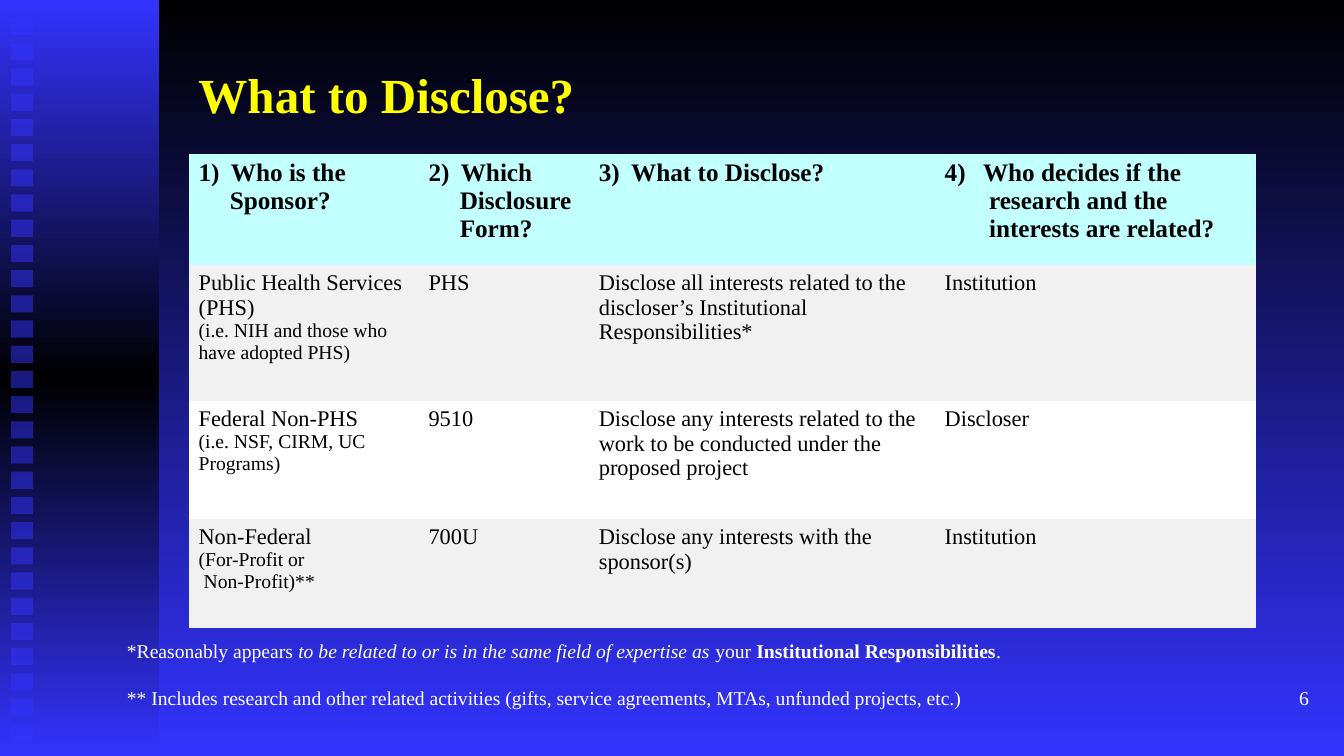
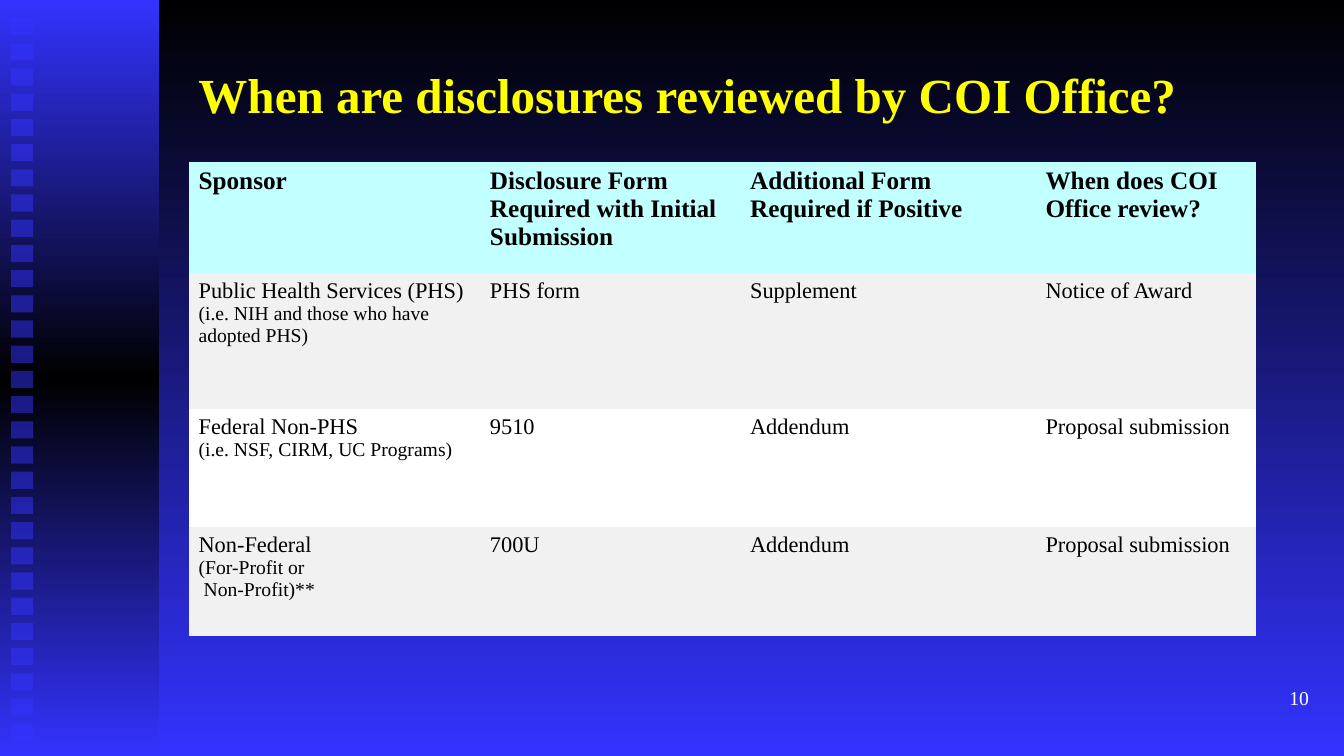
from copy import deepcopy
from lxml.etree import SubElement
from pptx import Presentation
from pptx.dml.color import RGBColor as Rgb
from pptx.enum.shapes import MSO_SHAPE as Shape
from pptx.enum.text import MSO_ANCHOR as Anchor, PP_ALIGN as Align
from pptx.oxml.ns import qn
from pptx.util import Inches, Pt

HUES = {
    "black": "000000", "blue": "3333FF", "yellow": "FFFF00",
    "white": "FFFFFF", "aqua": "C2FFFF", "gray": "F1F1F1",
}
FONT = "Times New Roman"
NO_GRID = "{2D5ABB26-0587-4C30-8999-92F81FD0307C}"
PHS = "Public Health Services (PHS)\n(i.e. NIH and those who have adopted PHS)"
FED = "Federal Non-PHS\n(i.e. NSF, CIRM, UC Programs)"
NON = "Non-Federal\n(For-Profit or\nNon-Profit)**"

PAGES = [
    {
        "title": "What to Disclose?", "page": "6", "top": 6.12,
        "cols": [9.12, 6.76, 13.72, 12.76],
        "hang": [(1.28, 1.24)] * 3 + [(1.52, 1.76)],
        "rows": [
            ["Who is the\nSponsor?", "Which\nDisclosure\nForm?", "What to Disclose?",
             "Who decides if the\nresearch and the\ninterests are related?"],
            [PHS, "PHS", "Disclose all interests related to the discloser’s "
             "Institutional Responsibilities*", "Institution"],
            [FED, "9510", "Disclose any interests related to the work to be "
             "conducted under the proposed project", "Discloser"],
            [NON, "700U", "Disclose any interests with the sponsor(s)", "Institution"],
        ],
        "notes": [
            [("*Reasonably appears ", ""),
             ("to be related to or is in the same field of expertise as", "i"),
             (" your ", ""), ("Institutional Responsibilities", "b"), (".", "")],
            [("** Includes research and other related activities (gifts, service "
              "agreements, MTAs, unfunded projects, etc.)", "")],
        ],
    },
    {
        "title": "When are disclosures reviewed by COI Office?", "page": "10", "top": 6.44,
        "cols": [11.56, 10.32, 11.72, 8.76],
        "hang": [],
        "rows": [
            ["Sponsor", "Disclosure Form Required with Initial Submission",
             "Additional Form Required if Positive", "When does COI Office review?"],
            [PHS, "PHS form", "Supplement", "Notice of Award"],
            [FED, "9510", "Addendum", "Proposal submission"],
            [NON, "700U", "Addendum", "Proposal submission"],
        ],
        "notes": [],
    },
]
TALL = [4.4, 5.4, 4.68, 4.32]

deck = Presentation()
deck.slide_width, deck.slide_height = Inches(13.33), Inches(7.5)
UNIT = deck.slide_height / 30


def grade(fill, node, hues):
    fill.gradient()
    fill.gradient_angle = 270
    stops = node.xpath(".//a:gsLst")[0]
    while len(stops) < len(hues):
        stops.append(deepcopy(stops[0]))
    for i, (stop, hue) in enumerate(zip(fill.gradient_stops, hues)):
        stop.position = i / (len(hues) - 1)
        stop.color.rgb = Rgb.from_string(HUES[hue])


def ink(para, size, hue, bold=False):
    for run in para.runs:
        run.font.name, run.font.size, run.font.bold = FONT, Pt(size), bold
        run.font.color.rgb = Rgb.from_string(HUES[hue])


master = deck.slide_master
grade(master.background.fill, master._element, ["black", "blue"])

for page in PAGES:
    slide = deck.slides.add_slide(deck.slide_layouts[6])

    side = slide.shapes.add_group_shape().shapes
    spots = [(0, 0, 6.32, 30)] + [(0.44, 0.72 + i, 0.88, 0.68) for i in range(29)]
    for i, spot in enumerate(spots):
        block = side.add_shape(Shape.RECTANGLE, *[int(n * UNIT) for n in spot])
        block.shadow.inherit = False
        block.line.fill.background()
        if i == 0:
            grade(block.fill, block._element, ["blue", "black", "blue"])
        else:
            block.fill.solid()
            block.fill.fore_color.rgb = Rgb.from_string(HUES["blue"])
            tint = block._element.xpath("p:spPr/a:solidFill/a:srgbClr")[0]
            SubElement(tint, qn("a:alpha"), val="50000")

    for text, spot, size, hue, side_of, bold in [
        (page["title"], (7.48, 1.24, 42.36, 5), 35, "yellow", Align.LEFT, True),
        (page["page"], (41.2, 26.68, 11.12, 2), 14, "white", Align.RIGHT, False),
    ]:
        frame = slide.shapes.add_textbox(*[int(n * UNIT) for n in spot]).text_frame
        frame.word_wrap = True
        frame.vertical_anchor = Anchor.MIDDLE
        frame.text = text
        frame.paragraphs[0].alignment = side_of
        ink(frame.paragraphs[0], size, hue, bold)

    spot = (7.48, page["top"], sum(page["cols"]), sum(TALL))
    table = slide.shapes.add_table(4, 4, *[int(n * UNIT) for n in spot]).table
    table._tbl.xpath("a:tblPr/a:tableStyleId")[0].text = NO_GRID
    table.first_row = table.horz_banding = False
    for col, wide in zip(table.columns, page["cols"]):
        col.width = int(wide * UNIT)
    for r, (row, tall) in enumerate(zip(table.rows, TALL)):
        row.height = int(tall * UNIT)
        for c, cell in enumerate(row.cells):
            cell.fill.solid()
            shade = "aqua" if r == 0 else ["white", "gray"][r % 2]
            cell.fill.fore_color.rgb = Rgb.from_string(HUES[shade])
            cell.text_frame.text = page["rows"][r][c]
            for i, para in enumerate(cell.text_frame.paragraphs):
                props = para._p.get_or_add_pPr()
                if r == 0 and page["hang"]:
                    first, rest = [int(n * UNIT) for n in page["hang"][c]]
                    props.set("marL", str(rest if i else first))
                    if i == 0:
                        props.set("indent", str(-first))
                        SubElement(props, qn("a:buAutoNum"),
                                   type="arabicParenR", startAt=str(c + 1))
                elif r and i == 2:
                    props.set("marL", str(int(0.2 * UNIT)))
                size = 18 if r == 0 else 14 if i else 16
                ink(para, size, "black", r == 0)

    if page["notes"]:
        spot = (4.64, 25.16, 41.28, 3.24)
        frame = slide.shapes.add_textbox(*[int(n * UNIT) for n in spot]).text_frame
        frame.word_wrap = True
        for i, note in enumerate(page["notes"]):
            para = frame.add_paragraph() if i else frame.paragraphs[0]
            if i:
                para.space_before = Pt(17)
            for text, style in note:
                para.add_run().text = text
            ink(para, 14, "white")
            for run, (text, style) in zip(para.runs, note):
                run.font.italic, run.font.bold = style == "i", style == "b"

deck.save("out.pptx")
